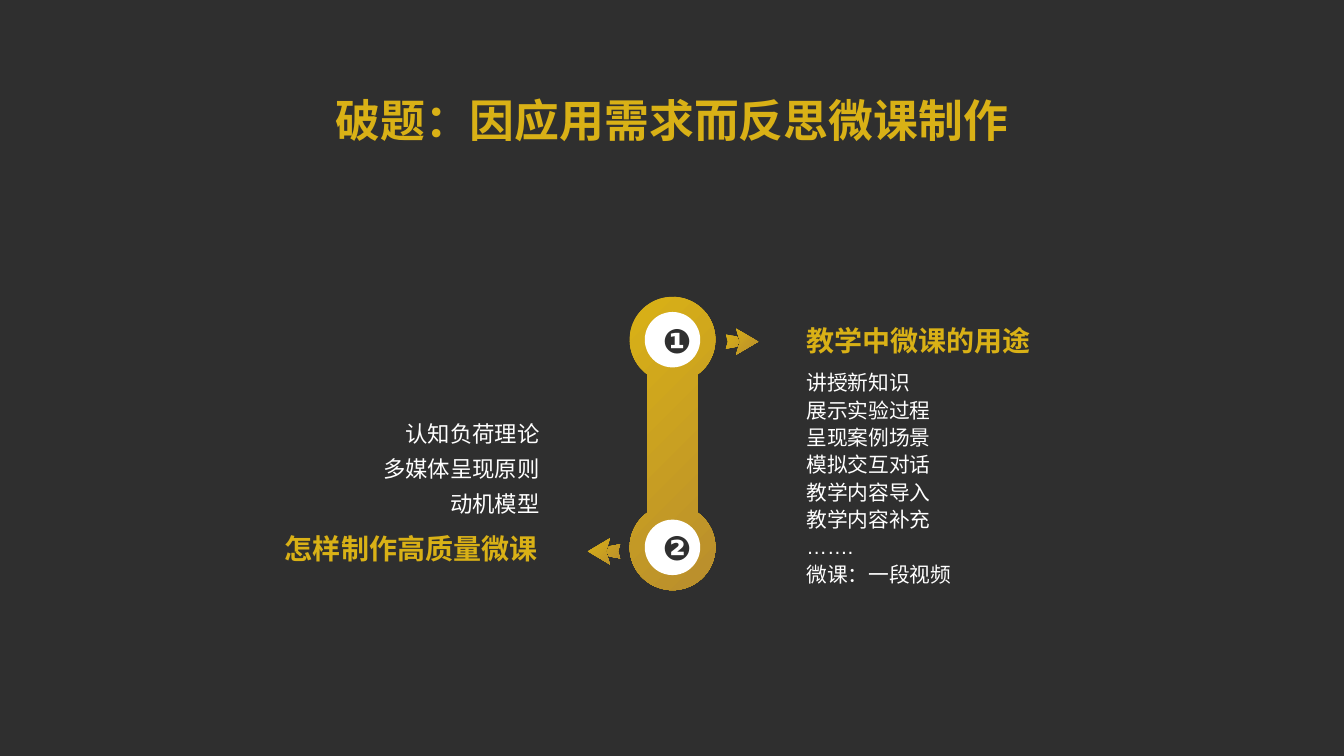
import math

import pptx
import pptx.dml.color
import pptx.enum.shapes
import pptx.enum.text
import pptx.util
from pptx.util import Inches

GOLD = pptx.dml.color.RGBColor(0xD9, 0xB1, 0x16)
BRONZE = pptx.dml.color.RGBColor(0xB9, 0x8E, 0x2D)
DARK = pptx.dml.color.RGBColor(0x2F, 0x2F, 0x2F)
WHITE = pptx.dml.color.RGBColor(0xFF, 0xFF, 0xFF)

ALIGN = pptx.enum.text.PP_ALIGN
ANCHOR = pptx.enum.text.MSO_ANCHOR

AXIS_X = 6.67
STEP_YS = (3.37, 5.43)
RING_RADIUS = 0.425
BAR_HALF_WIDTH = 0.25
DISC_SIZE = 0.55

# Offsets from the arrow's centre, pointing right: tail, then head
ARROW_CONTOURS = (
    ((-0.05, -0.05), (-0.16, -0.07), (-0.14, 0), (-0.16, 0.07), (-0.05, 0.05), (-0.03, 0)),
    ((0.16, 0), (-0.06, -0.13), (-0.02, 0), (-0.06, 0.13)),
)

HEADING = {"size": pptx.util.Pt(20), "bold": True, "color": GOLD}
USES = ("讲授新知识", "展示实验过程", "呈现案例场景", "模拟交互对话",
        "教学内容导入", "教学内容补充", "…….", "微课：一段视频")
THEORIES = ("认知负荷理论", "多媒体呈现原则", "动机模型")


def write_lines(frame, lines, font_format, align, anchor, spacing=1.0, wrap=True):
    frame.auto_size = pptx.enum.text.MSO_AUTO_SIZE.NONE
    frame.word_wrap = wrap
    frame.vertical_anchor = anchor
    for index, line in enumerate(lines):
        paragraph = frame.add_paragraph() if index else frame.paragraphs[0]
        paragraph.alignment = align
        paragraph.line_spacing = spacing
        run = paragraph.add_run()
        run.text = line
        run.font.name = "Arial"
        for attribute, value in font_format.items():
            if attribute == "color":
                run.font.color.rgb = value
            else:
                setattr(run.font, attribute, value)


def add_title(slide, text):
    title = slide.shapes.title
    title.left, title.top = Inches(0.62), Inches(0.74)
    title.width, title.height = Inches(12.09), Inches(0.77)
    write_lines(title.text_frame, [text],
                {"size": pptx.util.Pt(32), "bold": True, "color": GOLD},
                ALIGN.CENTER, ANCHOR.BOTTOM, 0.9)


def add_label(slide, box, lines, font_format, **layout):
    label = slide.shapes.add_textbox(*map(Inches, box))
    write_lines(label.text_frame, lines, font_format, **layout)


def add_gold_outline(slide, contours):
    """Draw closed contours, given in inches, with the gold gradient."""
    scaled = [[(Inches(x), Inches(y)) for x, y in contour] for contour in contours]
    builder = slide.shapes.build_freeform(*scaled[0][0])
    for index, contour in enumerate(scaled):
        if index:
            builder.move_to(*contour[0])
        builder.add_line_segments(contour[1:], close=True)
    outline = builder.convert_to_shape()
    outline.shadow.inherit = False
    outline.line.fill.background()
    outline.fill.gradient()
    outline.fill.gradient_angle = 315
    for stop, color in zip(outline.fill.gradient_stops, (GOLD, BRONZE)):
        stop.color.rgb = color


def add_dumbbell(slide):
    """Two rings joined by a bar; each arc runs from one bar edge to the other."""
    neck = math.degrees(math.acos(BAR_HALF_WIDTH / RING_RADIUS))
    sweep = 180 + 2 * neck
    steps = 60
    points = []
    for center_y, start in zip(STEP_YS, (180 - neck, -neck)):
        for step in range(steps + 1):
            angle = math.radians(start + sweep * step / steps)
            points.append((AXIS_X + RING_RADIUS * math.cos(angle),
                           center_y + RING_RADIUS * math.sin(angle)))
    add_gold_outline(slide, [points])


def add_arrow(slide, center_x, center_y, direction):
    """direction is 1 for right and -1 for left."""
    add_gold_outline(slide, [
        [(center_x + direction * dx, center_y + dy) for dx, dy in contour]
        for contour in ARROW_CONTOURS])


def add_number_disc(slide, center_y, number):
    disc = slide.shapes.add_shape(
        pptx.enum.shapes.MSO_SHAPE.OVAL,
        Inches(AXIS_X - DISC_SIZE / 2), Inches(center_y - DISC_SIZE / 2),
        Inches(DISC_SIZE), Inches(DISC_SIZE))
    disc.shadow.inherit = False
    disc.fill.solid()
    disc.fill.fore_color.rgb = WHITE
    disc.line.fill.background()
    write_lines(disc.text_frame, [number],
                {"size": pptx.util.Pt(24), "bold": True, "color": DARK},
                ALIGN.CENTER, ANCHOR.MIDDLE)


def main():
    presentation = pptx.Presentation()
    presentation.slide_width = Inches(13.33)
    presentation.slide_height = Inches(7.5)
    slide = presentation.slides.add_slide(presentation.slide_layouts[5])
    slide.background.fill.solid()
    slide.background.fill.fore_color.rgb = DARK

    add_title(slide, "破题：因应用需求而反思微课制作")
    add_dumbbell(slide)
    for center_y, number in zip(STEP_YS, "❶❷"):
        add_number_disc(slide, center_y, number)

    add_label(slide, (7.9, 3.1, 3.77, 0.55), ["教学中微课的用途"], HEADING,
              align=ALIGN.LEFT, anchor=ANCHOR.MIDDLE, wrap=False)
    add_label(slide, (7.9, 3.6, 3.1, 2.33), USES,
              {"size": pptx.util.Pt(14.8), "color": WHITE},
              align=ALIGN.LEFT, anchor=ANCHOR.TOP, spacing=1.1)
    add_label(slide, (1.68, 5.16, 3.75, 0.55), ["怎样制作高质量微课"], HEADING,
              align=ALIGN.RIGHT, anchor=ANCHOR.MIDDLE, wrap=False)
    add_label(slide, (2.35, 2.85, 3.1, 2.33), THEORIES,
              {"size": pptx.util.Pt(16), "color": WHITE},
              align=ALIGN.RIGHT, anchor=ANCHOR.BOTTOM, spacing=1.3)

    add_arrow(slide, 7.36, 3.39, 1)
    add_arrow(slide, 5.99, 5.47, -1)
    presentation.save("out.pptx")


if __name__ == "__main__":
    main()
